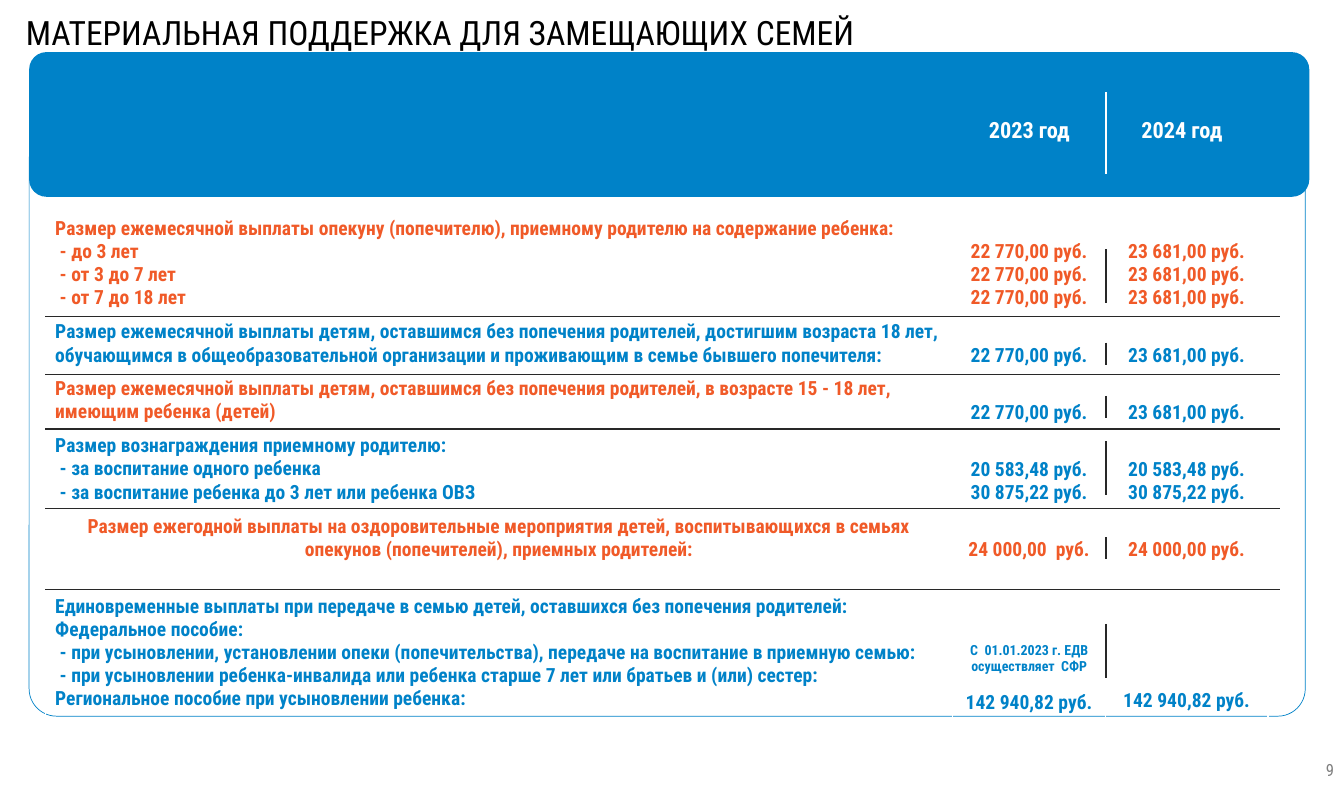
from pptx import Presentation
from pptx.dml.color import RGBColor
from pptx.enum.shapes import MSO_CONNECTOR, MSO_SHAPE
from pptx.enum.text import MSO_ANCHOR, PP_ALIGN
from pptx.oxml.ns import qn
from pptx.util import Pt
from lxml.etree import SubElement

FONT = "Roboto Condensed"
COLORS = {
    "blue": "0082C8",
    "orange": "F05A28",
    "dark": "282828",
    "white": "FFFFFF",
    "black": "000000",
    "gray": "808080",
}
LINE = 16.8
INSET = 3.6
WIDTHS = [650.9, 109.4, 116.6]
HEIGHTS = [74.4, 40.8, 40.8, 57.6, 57.6, 94]
RULES = [226.8, 268.6, 307.5, 364.3, 422.6]
BARS = [(178.6, 217.4), (245.5, 261.4), (283.7, 299.5),
        (316.1, 355), (385.2, 401), (447.1, 486)]
ROWS = [
    ("orange", "orange", 1, [
        "Размер ежемесячной выплаты опекуну (попечителю), приемному родителю на содержание ребенка:",
        " - до 3 лет",
        " - от 3 до 7 лет",
        " - от 7 до 18 лет",
    ], ["22 770,00 руб."] * 3, ["23 681,00 руб."] * 3),
    ("blue", "blue", 1, [
        "Размер ежемесячной выплаты детям, оставшимся без попечения родителей, достигшим возраста 18 лет, "
        "обучающимся в общеобразовательной организации и проживающим в семье бывшего попечителя:",
    ], ["22 770,00 руб."], ["23 681,00 руб."]),
    ("orange", "blue", 1, [
        "Размер ежемесячной выплаты детям, оставшимся без попечения родителей, в возрасте 15 - 18 лет, "
        "имеющим ребенка (детей)",
    ], ["22 770,00 руб."], ["23 681,00 руб."]),
    ("blue", "blue", 1, [
        "Размер вознаграждения приемному родителю:",
        " - за воспитание одного ребенка",
        " - за воспитание ребенка до 3 лет или ребенка ОВЗ",
    ], ["20 583,48 руб.", "30 875,22 руб."], ["20 583,48 руб.", "30 875,22 руб."]),
    ("orange", "orange", 1, [
        "Размер ежегодной выплаты на оздоровительные мероприятия детей, воспитывающихся в семьях "
        "опекунов (попечителей), приемных родителей:",
    ], ["24 000,00  руб."], ["24 000,00 руб."]),
    ("blue", "blue", 4, [
        "Единовременные выплаты при передаче в семью детей, оставшихся без попечения родителей:",
        "Федеральное пособие:",
        " - при усыновлении, установлении опеки (попечительства), передаче на воспитание в приемную семью:",
        " - при усыновлении ребенка-инвалида или ребенка старше 7 лет или братьев и (или) сестер:",
        "Региональное пособие при усыновлении ребенка:",
    ], ["С  01.01.2023 г. ЕДВ осуществляет  СФР", "142 940,82 руб."], ["142 940,82 руб."]),
]


def paint(name):
    return RGBColor.from_string(COLORS[name])


def write(frame, lines, size, color, bold=False, align=PP_ALIGN.LEFT):
    frame.text = "\n".join(lines)
    for para in frame.paragraphs:
        para.alignment = align
        para.font.name = FONT
        para.font.size = Pt(size)
        para.font.bold = bold
        para.font.color.rgb = paint(color)


def add_panel(slide, left, top, width, height, curve, fill, edge=None):
    panel = slide.shapes.add_shape(
        MSO_SHAPE.ROUNDED_RECTANGLE, Pt(left), Pt(top), Pt(width), Pt(height))
    panel.adjustments[0] = curve
    panel.shadow.inherit = False
    panel.fill.solid()
    panel.fill.fore_color.rgb = paint(fill)
    if edge:
        panel.line.color.rgb = paint(edge)
        panel.line.width = Pt(0.5)
    else:
        panel.line.fill.background()


def add_label(slide, left, top, width, height, text, size, color,
              bold=False, align=PP_ALIGN.LEFT, wrap=True, anchor=MSO_ANCHOR.TOP):
    box = slide.shapes.add_textbox(Pt(left), Pt(top), Pt(width), Pt(height))
    frame = box.text_frame
    frame.word_wrap = wrap
    frame.vertical_anchor = anchor
    write(frame, [text], size, color, bold, align)


def add_rule(slide, x1, y1, x2, y2, color="dark", width=1):
    rule = slide.shapes.add_connector(
        MSO_CONNECTOR.STRAIGHT, Pt(x1), Pt(y1), Pt(x2), Pt(y2))
    rule.line.color.rgb = paint(color)
    rule.line.width = Pt(width)
    SubElement(rule._element.spPr, qn("a:effectLst"))


def add_edges(cell, first):
    props = cell._tc.get_or_add_tcPr()
    for side in "LRTB":
        width = 3 if first and side == "B" else 1
        edge = SubElement(props, qn("a:ln" + side), w=str(Pt(width)))
        fill = SubElement(edge, qn("a:solidFill"))
        SubElement(fill, qn("a:srgbClr"), val=COLORS["white"])


def fill_cell(cell, lines, color, align, skip, first):
    add_edges(cell, first)
    cell.fill.background()
    cell.margin_top = Pt(INSET + skip * LINE)
    write(cell.text_frame, lines, 14, color, True, align)


def add_payments(slide):
    table = slide.shapes.add_table(
        len(ROWS), len(WIDTHS), Pt(32.4), Pt(151.9),
        Pt(sum(WIDTHS)), Pt(sum(HEIGHTS))).table
    table.first_row = table.horz_banding = False
    for col, width in zip(table.columns, WIDTHS):
        col.width = Pt(width)
    for num, (color, tint, skip, label, old, new) in enumerate(ROWS):
        table.rows[num].height = Pt(HEIGHTS[num])
        first = num == 0
        align = PP_ALIGN.CENTER if num == 4 else PP_ALIGN.LEFT
        fill_cell(table.cell(num, 0), label, color, align, 0, first)
        fill_cell(table.cell(num, 1), old, tint, PP_ALIGN.CENTER, min(skip, 2), first)
        fill_cell(table.cell(num, 2), new, tint, PP_ALIGN.CENTER, skip, first)
    note, total = table.cell(len(ROWS) - 1, 1).text_frame.paragraphs
    note.font.size = Pt(10)
    total.space_before = Pt(12)


def main():
    deck = Presentation()
    deck.slide_width, deck.slide_height = Pt(963.78), Pt(566.93)
    slide = deck.slides.add_slide(deck.slide_layouts[6])
    add_panel(slide, 20.9, 95, 915.1, 418.3, 0.047, "white", "blue")
    add_panel(slide, 20.9, 37.4, 918, 103.7, 0.12, "blue")
    add_payments(slide)
    add_label(slide, 11.5, 5, 619.2, 36, "МАТЕРИАЛЬНАЯ ПОДДЕРЖКА ДЛЯ ЗАМЕЩАЮЩИХ СЕМЕЙ",
              24, "black", wrap=False)
    add_label(slide, 793.2, 536.6, 170.6, 30.2, "9", 12, "gray",
              align=PP_ALIGN.RIGHT, anchor=MSO_ANCHOR.MIDDLE)
    for left, year in [(702, "2023 год"), (811.4, "2024 год")]:
        add_label(slide, left, 79.9, 91.4, 26.6, year, 16, "white", True)
    add_rule(slide, 793.4, 124.6, 793.4, 66.2, "white", 1.5)
    for y in RULES:
        add_rule(slide, 32.4, y, 918, y)
    for top, bottom in BARS:
        add_rule(slide, 793, top, 793, bottom)
    deck.save("out.pptx")


if __name__ == "__main__":
    main()
